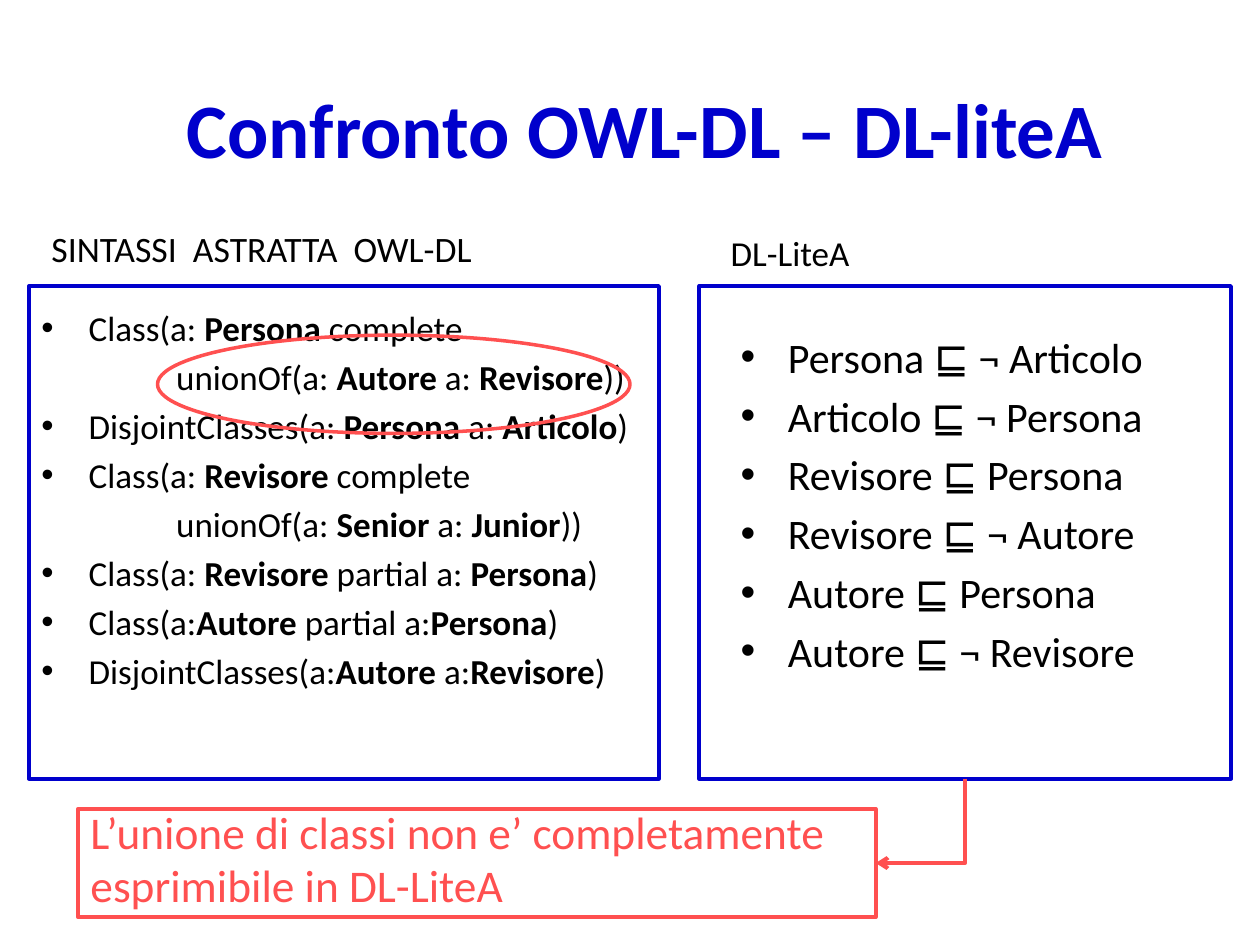
from dataclasses import dataclass

from lxml import etree
from pptx import Presentation
from pptx.dml.color import RGBColor
from pptx.enum.shapes import MSO_CONNECTOR, MSO_SHAPE
from pptx.enum.text import MSO_ANCHOR, PP_ALIGN
from pptx.oxml.ns import qn
from pptx.util import Inches, Pt

RECTANGLE, OVAL = MSO_SHAPE.RECTANGLE, MSO_SHAPE.OVAL
ELBOW = MSO_CONNECTOR.ELBOW
TOP, MIDDLE, BOTTOM = MSO_ANCHOR.TOP, MSO_ANCHOR.MIDDLE, MSO_ANCHOR.BOTTOM
LEFT, CENTER = PP_ALIGN.LEFT, PP_ALIGN.CENTER

FONT = "Calibri"
COLORS = {"text": "000000", "blue": "0000CC", "red": "FF5050"}
WIDTH, HEIGHT = Inches(10), Inches(7.5)
COLUMNS, ROWS = 100, 75
HANG = 3.75        # columns between a bullet and its text
DEEP_INDENT = 10.7  # columns before a continuation line
BULLET, DEEP = "•", ">"


@dataclass(frozen=True)
class Area:
    """A rectangle in grid columns and rows."""
    column: float
    row: float
    columns: float
    rows: float

    def lengths(self) -> tuple[int, int, int, int]:
        return (across(self.column), down(self.row),
                across(self.columns), down(self.rows))


@dataclass(frozen=True)
class Outline:
    kind: int
    area: Area
    color: str
    weight: float = 2.25


def across(columns: float) -> int:
    return round(WIDTH * columns / COLUMNS)


def down(rows: float) -> int:
    return round(HEIGHT * rows / ROWS)


LEFT_FRAME = Area(2.3, 22.7, 50, 39.1)
RIGHT_FRAME = Area(55.5, 22.7, 42.2, 39.1)
NOTE_FRAME = Area(6.2, 64.2, 63.3, 8.6)
OUTLINES = [
    Outline(RECTANGLE, LEFT_FRAME, "blue"),
    Outline(RECTANGLE, RIGHT_FRAME, "blue"),
    Outline(RECTANGLE, NOTE_FRAME, "red"),
    Outline(OVAL, Area(12.5, 26.6, 37.5, 7.8), "red", 2),
]

# Asterisks enclose bold words; the first character marks the kind of line.
OWL_LINES = [
    "•Class(a: *Persona* complete",
    ">unionOf(a: *Autore* a: *Revisore*))",
    "•DisjointClasses(a: *Persona* a: *Articolo*)",
    "•Class(a: *Revisore* complete",
    ">unionOf(a: *Senior* a: *Junior*))",
    "•Class(a: *Revisore *partial a: *Persona*)",
    "•Class(a:*Autore *partial a:*Persona*)",
    "•DisjointClasses(a:*Autore* a:*Revisore*)",
]
LITE_LINES = [
    "•Persona ⊑ ¬ Articolo",
    "•Articolo ⊑ ¬ Persona",
    "•Revisore ⊑ Persona",
    "•Revisore ⊑ ¬ Autore",
    "•Autore ⊑ Persona",
    "•Autore ⊑ ¬ Revisore",
]
NOTE_LINES = ["L’unione di classi non e’ completamente",
              "esprimibile in DL-LiteA"]


def indent(para, mark: str) -> None:
    """Hang a bulleted line, or push a continuation line inwards."""
    properties = para._p.get_or_add_pPr()
    if mark == DEEP:
        properties.set("marL", str(across(DEEP_INDENT)))
    elif mark == BULLET:
        properties.set("marL", str(across(HANG)))
        properties.set("indent", str(-across(HANG)))
        font = etree.SubElement(properties, qn("a:buFont"))
        font.set("typeface", "Arial")
        etree.SubElement(properties, qn("a:buChar")).set("char", BULLET)


def write(box, lines: list[str], *, size: float, color: str = "text",
          bold: bool = False, anchor=TOP, align=LEFT,
          spacing: float = 1) -> None:
    frame = box.text_frame
    frame.word_wrap = True
    frame.vertical_anchor = anchor
    for number, line in enumerate(lines):
        para = frame.add_paragraph() if number else frame.paragraphs[0]
        para.alignment = align
        para.line_spacing = spacing
        para.space_before = Pt(round(size * 0.2, 1))
        mark = line[0] if line[0] in (BULLET, DEEP) else ""
        indent(para, mark)
        for position, words in enumerate(line[len(mark):].split("*")):
            span = para.add_run()
            span.text = words
            span.font.name = FONT
            span.font.size = Pt(size)
            span.font.bold = bold or position % 2 == 1
            span.font.color.rgb = RGBColor.from_string(COLORS[color])


def add_text(page, area: Area, lines: list[str], **text_format) -> None:
    write(page.shapes.add_textbox(*area.lengths()), lines, **text_format)


def add_outline(page, outline: Outline) -> None:
    shape = page.shapes.add_shape(outline.kind, *outline.area.lengths())
    shape.shadow.inherit = False
    shape.fill.background()
    shape.line.color.rgb = RGBColor.from_string(COLORS[outline.color])
    shape.line.width = Pt(outline.weight)


def add_corner_arrow(page, start: Area, target: Area) -> None:
    """Lead from the bottom centre of start down, then left to target."""
    right = start.column + start.columns / 2
    top = start.row + start.rows
    left = target.column + target.columns
    bottom = target.row + target.rows / 2
    # The quarter turn swaps the sides, so the unturned box is transposed.
    middle_x, middle_y = (left + right) / 2, (top + bottom) / 2
    half_x, half_y = (bottom - top) / 2, (right - left) / 2
    arrow = page.shapes.add_connector(
        ELBOW, across(middle_x - half_x), down(middle_y - half_y),
        across(middle_x + half_x), down(middle_y + half_y))
    arrow.line.color.rgb = RGBColor.from_string(COLORS["red"])
    arrow.line.width = Pt(2.25)
    properties = arrow._element.spPr
    properties.find(qn("a:xfrm")).set("rot", str(90 * 60000))
    properties.find(qn("a:prstGeom")).set("prst", "bentConnector2")
    line = properties.find(qn("a:ln"))
    etree.SubElement(line, qn("a:tailEnd")).set("type", "arrow")
    etree.SubElement(properties, qn("a:effectLst"))


def main() -> None:
    deck = Presentation()
    deck.slide_width, deck.slide_height = WIDTH, HEIGHT
    page = deck.slides.add_slide(deck.slide_layouts[5])

    title = page.shapes.title
    title.left, title.top, title.width, title.height = Area(
        6.2, 3.9, 90, 12.5).lengths()
    write(title, ["Confronto OWL-DL – DL-liteA"], size=44, color="blue",
          bold=True, anchor=MIDDLE, align=CENTER)

    add_text(page, Area(3.1, 18, 36.7, 3.9), ["SINTASSI  ASTRATTA  OWL-DL"],
             size=20.4, anchor=BOTTOM)
    add_text(page, Area(2.3, 23.8, 52.3, 43.2), OWL_LINES, size=20)
    add_text(page, Area(57, 18.7, 38, 3.5), ["DL-LiteA"],
             size=20, anchor=BOTTOM)
    add_text(page, Area(57.8, 25.8, 42.2, 39.8), LITE_LINES, size=24)
    add_text(page, Area(6.2, 64.2, 73.4, 9.4), NOTE_LINES, size=25.9,
             color="red", spacing=0.8)

    for outline in OUTLINES:
        add_outline(page, outline)
    add_corner_arrow(page, RIGHT_FRAME, NOTE_FRAME)
    deck.save("out.pptx")


if __name__ == "__main__":
    main()
